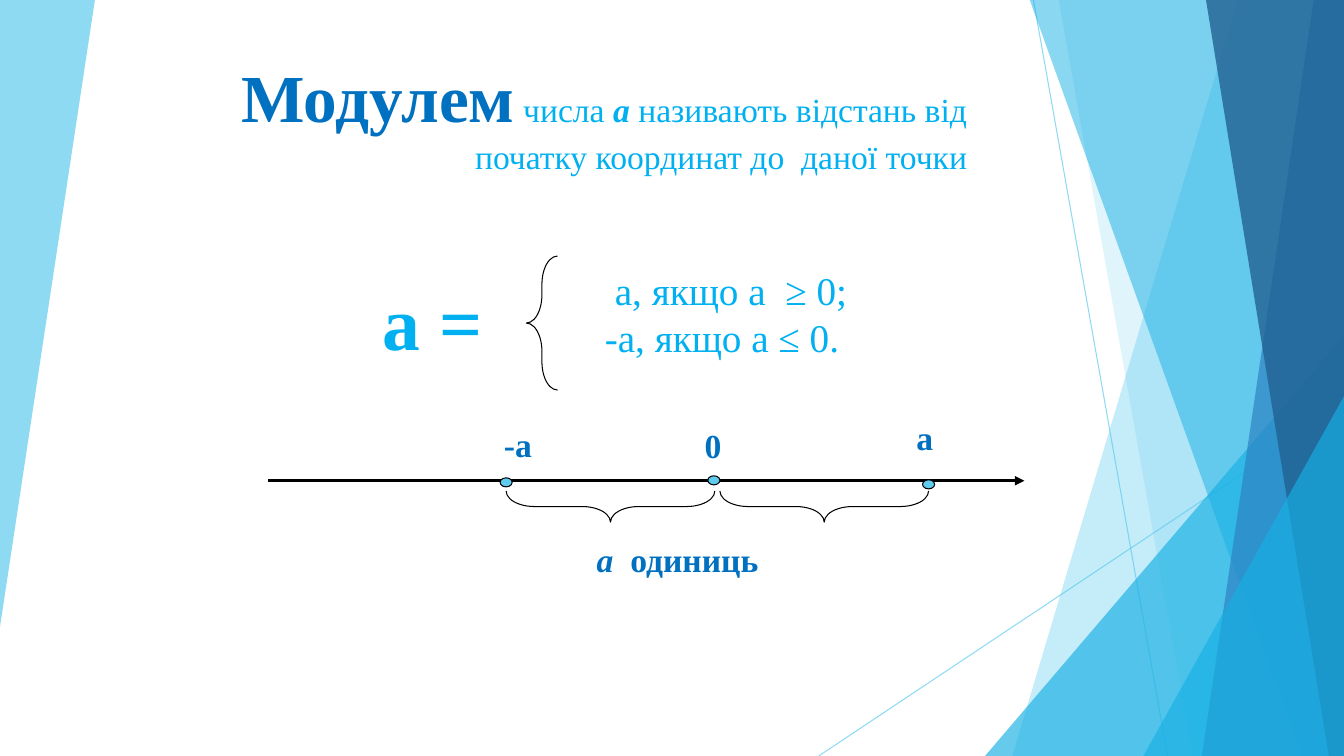
import pptx
import pptx.dml.color
import pptx.enum.dml
import pptx.enum.shapes
import pptx.enum.text
import pptx.oxml
import pptx.oxml.ns
import pptx.util

PX = pptx.util.Inches(1) // 100
RGB = pptx.dml.color.RGBColor
SHAPE = pptx.enum.shapes.MSO_SHAPE
ALIGN = pptx.enum.text.PP_ALIGN
ANCHOR = pptx.enum.text.MSO_ANCHOR
AUTO_SIZE = pptx.enum.text.MSO_AUTO_SIZE

WHITE = RGB(0xFF, 0xFF, 0xFF)
BLACK = RGB(0x00, 0x00, 0x00)
SKY = RGB(0x5F, 0xCB, 0xEF)
AZURE = RGB(0x17, 0xB0, 0xE4)
STEEL = RGB(0x2E, 0x83, 0xC3)
NAVY = RGB(0x22, 0x62, 0x92)
BRIGHT = RGB(0x00, 0xB0, 0xF0)
BLUE = RGB(0x00, 0x70, 0xC0)

FONT = "Times New Roman"
LABEL = {"size": 24, "bold": True, "color": BLUE}
PHRASE = {"size": 24, "color": BRIGHT}
CASE = {"size": 28, "color": BRIGHT}


def apply(target, values):
    """Set every named value on the target."""
    for name, value in values.items():
        setattr(target, name, value)


def add_xml(parent, tag, **attributes):
    """Append a drawing element to the parent."""
    child = pptx.oxml.parse_xml(f"<a:{tag} {pptx.oxml.ns.nsdecls('a')}/>")
    for name, value in attributes.items():
        child.set(name, str(value))
    parent.append(child)


def set_opacity(fill_owner, percent):
    """Make the solid colour under an element partly transparent."""
    color = fill_owner.find(".//" + pptx.oxml.ns.qn("a:srgbClr"))
    add_xml(color, "alpha", val=percent * 1000)


def paint_facet(facet, color, percent):
    """Give a background facet a transparent fill and no outline."""
    facet.shadow.inherit = False
    facet.fill.solid()
    facet.fill.fore_color.rgb = color
    facet.line.fill.background()
    set_opacity(facet.fill._xPr, percent)


def add_facet(slide, points, color, percent):
    """Draw a polygon of the background."""
    builder = slide.shapes.build_freeform(*points[0], scale=PX)
    builder.add_line_segments(points[1:], close=True)
    paint_facet(builder.convert_to_shape(), color, percent)


def add_band(slide, top_left, bottom_left, color, percent):
    """Draw a facet that reaches the right edge of the slide."""
    points = [(top_left, -1), (1333, -1), (1333, 750), (bottom_left, 750)]
    add_facet(slide, points, color, percent)


def add_preset(slide, kind, left, top, width, height):
    """Add a preset shape without a shadow."""
    preset = slide.shapes.add_shape(
        kind, left * PX, top * PX, width * PX, height * PX)
    preset.shadow.inherit = False
    return preset


def add_corner(slide, left, top):
    """Draw a triangle in the bottom right corner."""
    corner = add_preset(
        slide, SHAPE.ISOSCELES_TRIANGLE, left, top, 1333 - left, 750 - top)
    corner.adjustments[0] = 1
    paint_facet(corner, AZURE, 66)


def add_line(slide, start, end, color, points):
    """Draw a straight line without a shadow."""
    line = slide.shapes.add_connector(
        pptx.enum.shapes.MSO_CONNECTOR.STRAIGHT,
        *(value * PX for value in (*start, *end)))
    line.line.color.rgb = color
    line.line.width = pptx.util.Pt(points)
    add_xml(line._element.spPr, "effectLst")
    return line


def add_outline(preset):
    """Give a shape a thin black outline."""
    preset.line.color.rgb = BLACK
    preset.line.width = pptx.util.Pt(0.75)


def add_brace(slide, left, top, width, height, rotation=0):
    """Draw a curly brace."""
    brace = add_preset(slide, SHAPE.LEFT_BRACE, left, top, width, height)
    brace.rotation = rotation
    brace.adjustments[0] = 0.905
    brace.fill.background()
    add_outline(brace)


def add_point(slide, left, top):
    """Mark a point on the number line."""
    point = add_preset(slide, SHAPE.OVAL, left, top, 12, 9)
    point.fill.solid()
    point.fill.fore_color.rgb = SKY
    add_outline(point)


def add_text(slide, box, paragraphs, frame=None, layout=None):
    """Write paragraphs made of (text, format) runs."""
    text_frame = slide.shapes.add_textbox(
        *(value * PX for value in box)).text_frame
    apply(text_frame, {"word_wrap": True, **(frame or {})})
    for index, runs in enumerate(paragraphs):
        paragraph = (text_frame.add_paragraph() if index
                     else text_frame.paragraphs[0])
        apply(paragraph, layout or {})
        for text, style in runs:
            run = paragraph.add_run()
            run.text = text
            values = {"name": FONT, "bold": False, "italic": False, **style}
            run.font.color.rgb = values.pop("color")
            values["size"] = pptx.util.Pt(values["size"])
            apply(run.font, values)
    return text_frame


def add_background(slide):
    """Draw the facets and thin lines behind the content."""
    slide.background.fill.solid()
    slide.background.fill.fore_color.rgb = WHITE
    add_facet(slide, [(0, -1), (94, -1), (94, 1), (0, 622)], SKY, 70)
    for start, end in (((1025, 0), (1158, 750)), ((1333, 403), (812, 750))):
        ray = add_line(slide, start, end, SKY, 0.75)
        set_opacity(ray.line._ln, 70)
    add_band(slide, 1228, 1004, SKY, 36)
    add_band(slide, 1050, 1183, SKY, 20)
    add_corner(slide, 977, 333)
    add_band(slide, 1021, 1291, AZURE, 50)
    add_band(slide, 1303, 1192, STEEL, 70)
    add_band(slide, 1196, 1318, NAVY, 80)
    add_corner(slide, 1134, 393)


def add_definition(slide):
    """Write the definition of the modulus and its two cases."""
    add_text(slide, (370, 231, 146, 137),
             [[("а =", {"size": 54, "bold": True, "color": BRIGHT})]],
             {"vertical_anchor": ANCHOR.BOTTOM})
    add_text(slide, (120, 50, 849, 151), [[
        ("Модулем", {"size": 48, "bold": True, "color": BLUE}),
        (" числа ", PHRASE),
        ("а ", {**PHRASE, "bold": True, "italic": True}),
        ("називають відстань від початку координат до  даної точки", PHRASE),
    ]], layout={"alignment": ALIGN.RIGHT, "space_before": pptx.util.Pt(10)})
    add_brace(slide, 522, 254, 31, 133)
    cases = add_text(slide, (590, 259, 299, 135), [
        [("а, якщо а  ≥ 0;", CASE)], [("-а, якщо а ≤ 0.", CASE)]])
    cases.paragraphs[0]._p.get_or_add_pPr().set("marL", str(10 * PX))


def add_number_line(slide):
    """Draw the number line with its points, braces and labels."""
    axis = add_line(slide, (266, 477), (1016, 477), BLACK, 2.25)
    add_xml(axis.line._ln, "tailEnd", type="triangle")
    for left, top in ((702, 472), (915, 476), (496, 474)):
        add_point(slide, left, top)
    for left in (590, 802):
        add_brace(slide, left, 399, 31, 207, 270)
    grow = {"auto_size": AUTO_SIZE.SHAPE_TO_FIT_TEXT}
    tight = {**grow, "word_wrap": False}
    add_text(slide, (899, 409, 109, 51), [[("а", LABEL)]], grow)
    add_text(slide, (490, 416, 109, 51), [[("-а", LABEL)]], grow)
    add_text(slide, (689, 417, 37, 51), [[("0", LABEL)]], tight)
    add_text(slide, (582, 530, 186, 51),
             [[("а  ", {**LABEL, "italic": True}), ("одиниць", LABEL)]], tight)


def main():
    """Build the slide and save it."""
    deck = pptx.Presentation()
    apply(deck, {"slide_width": 1333 * PX, "slide_height": 750 * PX})
    slide = deck.slides.add_slide(deck.slide_layouts[6])
    add_background(slide)
    add_definition(slide)
    add_number_line(slide)
    deck.save("out.pptx")


if __name__ == "__main__":
    main()
